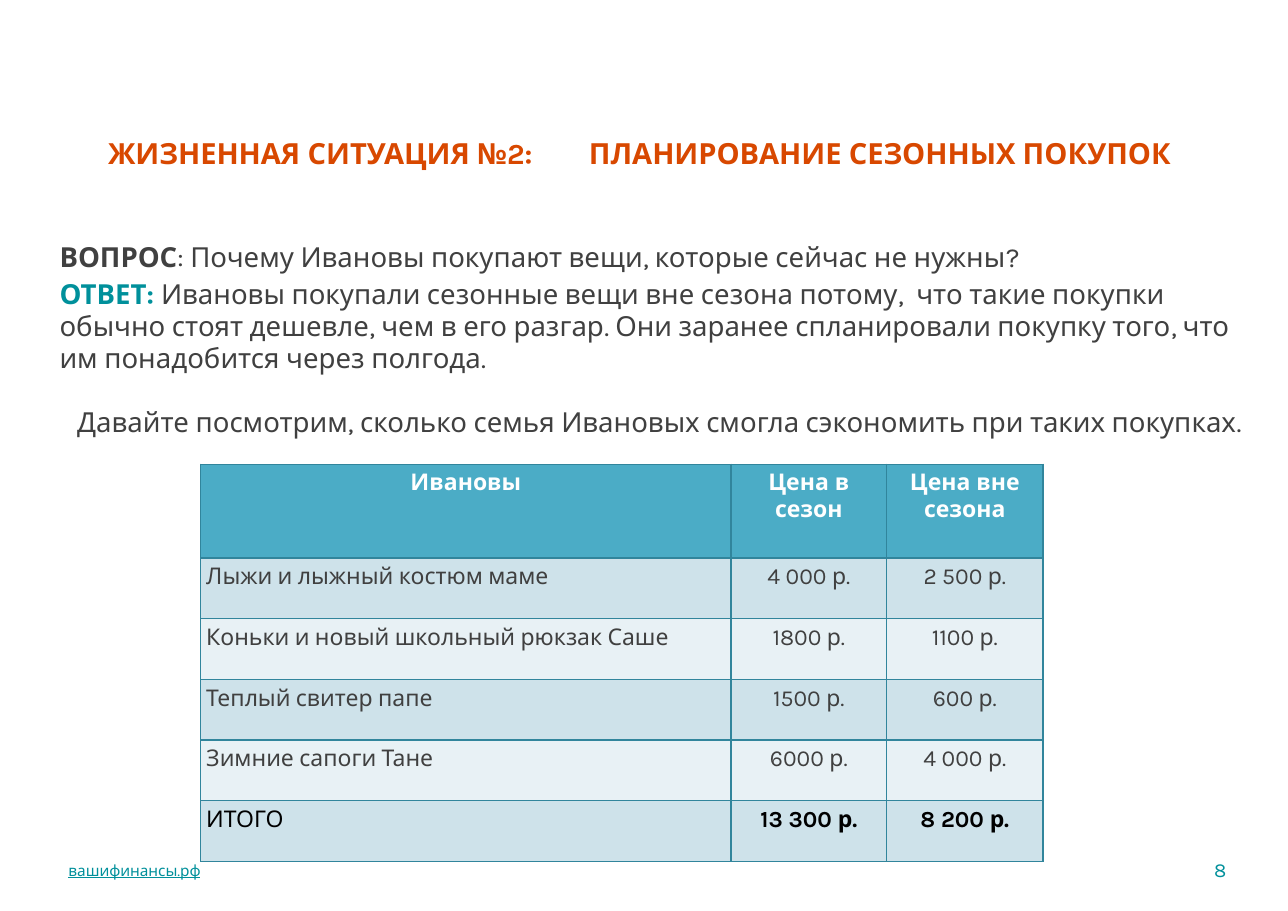
from pptx import Presentation
from pptx.util import Inches, Pt
from pptx.dml.color import RGBColor
from pptx.enum.text import PP_ALIGN, MSO_ANCHOR
from lxml import etree

LEFT, MID, RIGHT = PP_ALIGN.LEFT, PP_ALIGN.CENTER, PP_ALIGN.RIGHT
TOP, CENTER = MSO_ANCHOR.TOP, MSO_ANCHOR.MIDDLE
TEAL = RGBColor(0x00, 0x90, 0x9B)
ORANGE = RGBColor(0xD8, 0x48, 0x00)
GRAY = RGBColor(0x40, 0x40, 0x40)
WHITE = RGBColor(0xFF, 0xFF, 0xFF)
BLACK = RGBColor(0x00, 0x00, 0x00)
HEAD = RGBColor(0x4B, 0xAC, 0xC6)
BANDS = [RGBColor(0xCE, 0xE2, 0xEA), RGBColor(0xE8, 0xF1, 0xF5)]
EDGE = "31859C"
NS = "http://schemas.openxmlformats.org/drawingml/2006/main"
PAD = Inches(0.05)


def write(para, text, size=18, color=GRAY, bold=False, line=False, align=LEFT):
    para.alignment = align
    run = para.add_run()
    run.text = text
    font = run.font
    font.name, font.size, font.bold = "Karla", Pt(size), bold
    font.underline = line
    font.color.rgb = color


def box(left, top, width, height, anchor=TOP, wrap=True):
    frame = slide.shapes.add_textbox(
        Inches(left), Inches(top), Inches(width), Inches(height)).text_frame
    frame.margin_left = frame.margin_right = PAD
    frame.margin_top = frame.margin_bottom = PAD
    frame.vertical_anchor = anchor
    frame.word_wrap = wrap
    return frame


deck = Presentation()
deck.slide_width, deck.slide_height = Inches(11.68), Inches(8.26)
slide = deck.slides.add_slide(deck.slide_layouts[6])

site = box(0.57, 7.75, 3.97, 0.28, CENTER)
write(site.paragraphs[0], "вашифинансы.рф", size=10, color=TEAL, line=True)
page = box(10.95, 7.72, 0.22, 0.33, CENTER, wrap=False)
write(page.paragraphs[0], "8", size=13, color=TEAL, align=RIGHT)

title = box(0.25, 1.18, 11.1, 0.67).paragraphs[0]
tabs = etree.SubElement(title._p.get_or_add_pPr(), f"{{{NS}}}tabLst")
etree.SubElement(tabs, f"{{{NS}}}tab", pos=str(Inches(4.36)), algn="l")
write(title, "ЖИЗНЕННАЯ СИТУАЦИЯ №2: \tПЛАНИРОВАНИЕ СЕЗОННЫХ ПОКУПОК",
      size=19, color=ORANGE, bold=True, align=MID)

body = box(0.49, 2.13, 10.98, 2.08)
ask = body.paragraphs[0]
write(ask, "ВОПРОС", bold=True)
write(ask, ": Почему Ивановы покупают вещи, которые сейчас не нужны?")
reply = body.add_paragraph()
reply.line_spacing, reply.space_before = 0.96, Pt(4)
write(reply, "ОТВЕТ: ", color=TEAL, bold=True)
write(reply, "Ивановы покупали сезонные вещи вне сезона потому,  что такие "
      "покупки обычно стоят дешевле, чем в его разгар. Они заранее "
      "спланировали покупку того, что им понадобится через полгода.")
lead = body.add_paragraph()
lead.line_spacing, lead.space_before = 0.8, Pt(24)
write(lead, "Давайте посмотрим, сколько семья Ивановых смогла сэкономить "
      "при таких покупках.", align=MID)

prices = [
    ("Ивановы", "Цена в сезон", "Цена вне сезона"),
    ("Лыжи и лыжный костюм маме", "4 000 р.", "2 500 р."),
    ("Коньки и новый школьный рюкзак Саше", "1800 р.", "1100 р."),
    ("Теплый свитер папе", "1500 р.", "600 р."),
    ("Зимние сапоги Тане", "6000 р.", "4 000 р."),
    ("ИТОГО", "13 300 р.", "8 200 р."),
]
last = len(prices) - 1
table = slide.shapes.add_table(len(prices), 3, Inches(1.82), Inches(4.21),
                               Inches(7.64), Inches(3.6)).table
for col, width in zip(table.columns, (4.81, 1.41, 1.42)):
    col.width = Inches(width)
for i, row in enumerate(prices):
    table.rows[i].height = Inches(0.55 if i else 0.85)
    for j, text in enumerate(row):
        cell = table.cell(i, j)
        cell.margin_left = cell.margin_right = PAD
        cell.margin_top = cell.margin_bottom = PAD
        props = cell._tc.get_or_add_tcPr()
        for side in ("lnL", "lnR", "lnT", "lnB"):
            edge = etree.SubElement(props, f"{{{NS}}}{side}", w=str(Pt(1)))
            fill = etree.SubElement(edge, f"{{{NS}}}solidFill")
            etree.SubElement(fill, f"{{{NS}}}srgbClr", val=EDGE)
        cell.fill.solid()
        cell.fill.fore_color.rgb = BANDS[(i - 1) % 2] if i else HEAD
        color = WHITE if i == 0 else BLACK if i == last else GRAY
        write(cell.text_frame.paragraphs[0], text, size=15, color=color,
              bold=i == 0 or (i == last and j > 0),
              align=MID if i == 0 or j else LEFT)

deck.save("out.pptx")
